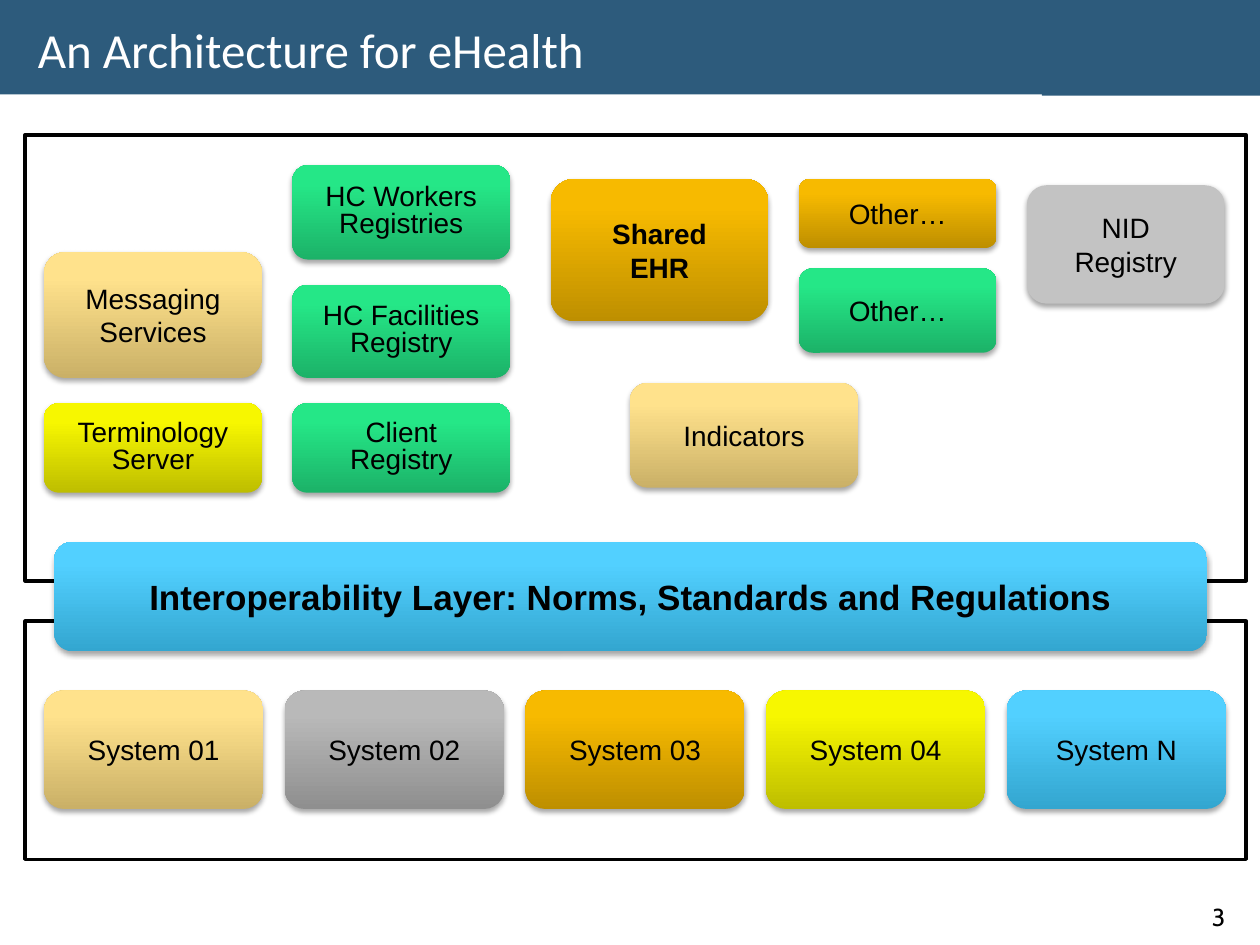
from lxml.etree import SubElement
from pptx import Presentation
from pptx.dml.color import RGBColor
from pptx.enum.shapes import MSO_SHAPE
from pptx.enum.text import MSO_ANCHOR, MSO_AUTO_SIZE, PP_ALIGN
from pptx.oxml.ns import qn
from pptx.util import Inches, Pt

THEME = {
    "banner": "2D5B7C", "paper": "FFFFFF", "ink": "000000",
    "green": ("1CB268", "25E787"), "yellow": ("BEBE00", "F7F700"),
    "sand": ("CAB067", "FFE28C"), "amber": ("BE8F00", "F7BA00"),
    "blue": ("33A6D0", "52D0FF"), "gray": ("8F8F8F", "B9B9B9"),
    "silver": ("C3C3C3", "C3C3C3"),
    "title": {"name": "Calibri", "size": Pt(28), "bold": False},
    "layer": {"name": "Arial", "size": Pt(20), "bold": True},
    "strong": {"name": "Arial", "size": Pt(16), "bold": True},
    "label": {"name": "Arial", "size": Pt(16), "bold": False},
    "number": {"name": "Cabin", "size": Pt(14), "bold": False},
}

deck = Presentation()
deck.slide_width, deck.slide_height = Inches(10), Inches(7.5)
COLUMN, ROW = deck.slide_width / 100, deck.slide_height / 100
page = deck.slides.add_slide(deck.slide_layouts[5])


def add_block(kind, left, top, width, height, color):
    block = page.shapes.add_shape(
        kind, int(left * COLUMN), int(top * ROW), int(width * COLUMN), int(height * ROW))
    block.shadow.inherit = False
    block.line.fill.background()
    if isinstance(color, str):
        block.fill.solid()
        block.fill.fore_color.rgb = RGBColor.from_string(color)
    else:
        block.fill.gradient()
        block.fill.gradient_angle = 90
        for stop, shade, position in zip(block.fill.gradient_stops, color, (0, 0.8)):
            stop.color.rgb = RGBColor.from_string(shade)
            stop.position = position
    return block


def write(frame, text, style, color, align, spacing=1.0):
    frame.text = text
    for paragraph in frame.paragraphs:
        paragraph.alignment = align
        paragraph.line_spacing = spacing
        for span in paragraph.runs:
            for name, value in THEME[style].items():
                setattr(span.font, name, value)
            span.font.color.rgb = RGBColor.from_string(THEME[color])


banner = add_block(MSO_SHAPE.RECTANGLE, -0.4, -0.13, 101, 10.13, THEME["banner"])
title = page.shapes.title
title.element.addprevious(banner.element)
title.left, title.top = int(2 * COLUMN), int(0.67 * ROW)
title.width, title.height = int(87.4 * COLUMN), int(8.93 * ROW)
title.text_frame.vertical_anchor = MSO_ANCHOR.MIDDLE
write(title.text_frame, "An Architecture for eHealth", "title", "paper", PP_ALIGN.LEFT)

for top, height in ((65.73, 25.2), (14.27, 47.2)):
    panel = add_block(MSO_SHAPE.RECTANGLE, 2, top, 96.9, height, THEME["paper"])
    panel.line.color.rgb = RGBColor.from_string(THEME["ink"])
    panel.line.width = Pt(2)

blocks = [
    ("Interoperability Layer: Norms, Standards and Regulations",
     4.3, 57.33, 91.5, 11.6, "blue", "layer", 1.0),
    ("HC Facilities\vRegistry", 23.2, 30.13, 17.3, 9.87, "green", "label", 0.8),
    ("HC Workers\nRegistries", 23.2, 17.47, 17.3, 10, "green", "label", 0.8),
    ("Client\nRegistry", 23.2, 42.67, 17.3, 9.47, "green", "label", 0.8),
    ("Terminology\nServer", 3.5, 42.67, 17.3, 9.47, "yellow", "label", 0.8),
    ("Messaging\nServices", 3.5, 26.67, 17.3, 13.33, "sand", "label", 1.0),
    ("Shared\nEHR", 43.7, 18.93, 17.3, 15.07, "amber", "strong", 1.0),
    ("Indicators", 50, 40.53, 18.1, 11.07, "sand", "label", 1.0),
    ("Other…", 63.4, 28.4, 15.7, 8.93, "green", "label", 1.0),
    ("Other…", 63.4, 18.93, 15.7, 7.33, "amber", "label", 1.0),
    ("NID\nRegistry", 81.5, 19.6, 15.7, 12.53, "silver", "label", 1.0),
]
systems = (("01", "sand"), ("02", "gray"), ("03", "amber"), ("04", "yellow"), ("N", "blue"))
for index, (suffix, color) in enumerate(systems):
    blocks.append((f"System {suffix}", 3.5 + 19.1 * index, 73.07, 17.4, 12.53, color, "label", 1.0))

for text, left, top, width, height, color, style, spacing in blocks:
    block = add_block(MSO_SHAPE.ROUNDED_RECTANGLE, left, top, width, height, THEME[color])
    effects = block.element.spPr.find(qn("a:effectLst"))
    shadow = SubElement(effects, qn("a:outerShdw"), blurRad=str(Pt(3.1)), dist=str(Pt(1.8)),
                        dir="5400000", rotWithShape="0")
    tint = SubElement(shadow, qn("a:srgbClr"), val=THEME["ink"])
    SubElement(tint, qn("a:alpha"), val="35000")
    block.text_frame.word_wrap = True
    block.text_frame.vertical_anchor = MSO_ANCHOR.MIDDLE
    write(block.text_frame, text, style, "ink", PP_ALIGN.CENTER, spacing)

add_block(MSO_SHAPE.RECTANGLE, 82.7, 0, 17.6, 10.13, THEME["banner"])

number = page.shapes.add_textbox(
    int(95.2 * COLUMN), int(94.8 * ROW), int(4.4 * COLUMN), int(4.53 * ROW))
number.text_frame.word_wrap = False
number.text_frame.auto_size = MSO_AUTO_SIZE.SHAPE_TO_FIT_TEXT
write(number.text_frame, "3", "number", "ink", PP_ALIGN.LEFT)

deck.save("out.pptx")
